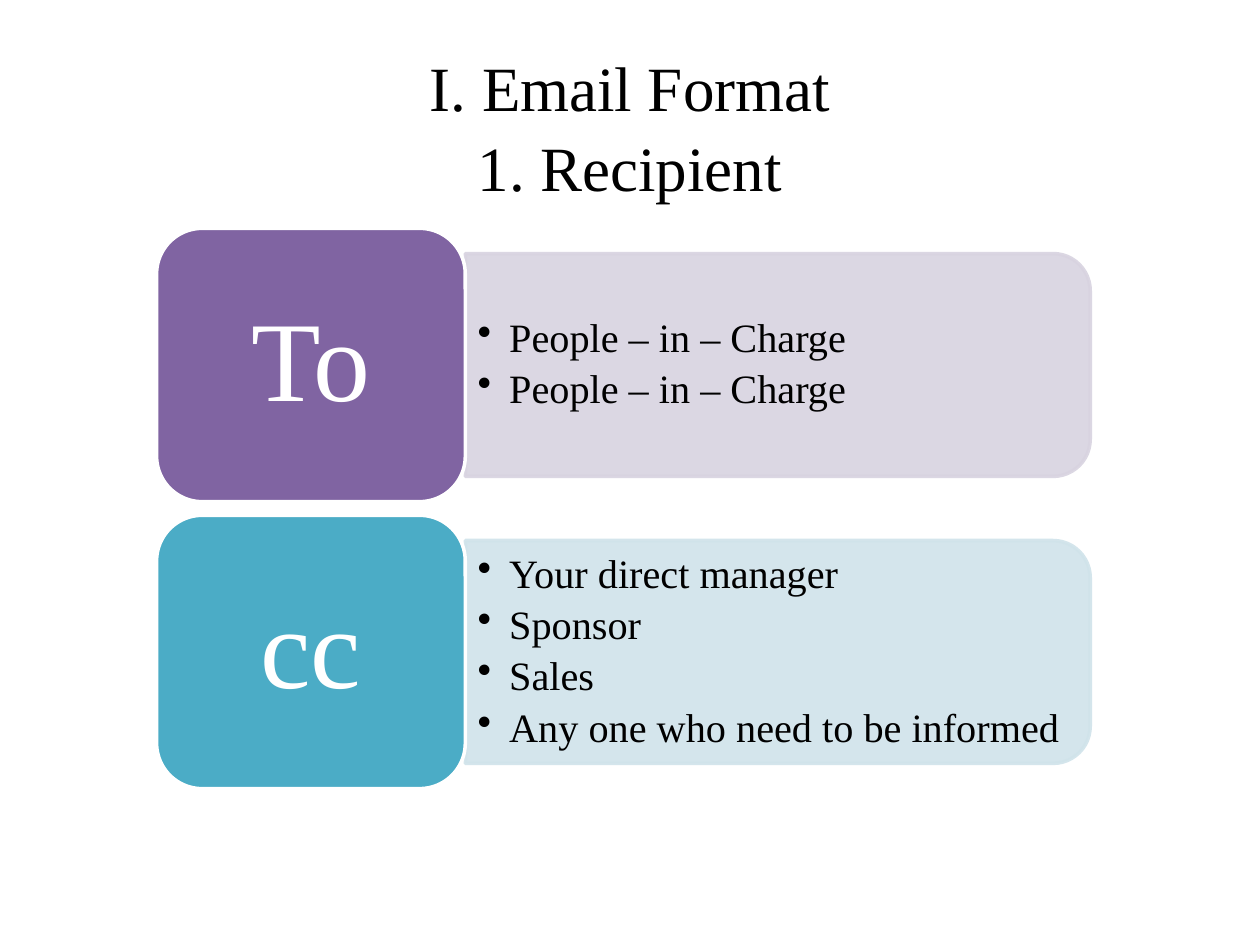
from lxml import etree
from pptx import Presentation
from pptx import util as u
from pptx.dml.color import RGBColor
from pptx.enum import shapes, text
from pptx.oxml import ns

Pt = u.Pt
FONT = "Times New Roman"
ROWS = [
    ("To", "8064A2", "D8D3E0", ["People – in – Charge"] * 2),
    ("cc", "4BACC6", "D0E3EA",
     ["Your direct manager", "Sponsor", "Sales", "Any one who need to be informed"]),
]


def color(value):
    """Turn a hex string into a colour."""
    return RGBColor.from_string(value)


def apply(target, **values):
    """Set each given attribute on the target."""
    for name, value in values.items():
        setattr(target, name, value)


def format_text(paragraph, size, ink, **layout):
    """Set the font and the paragraph layout."""
    apply(paragraph, **layout)
    apply(paragraph.font, name=FONT, size=Pt(size))
    paragraph.font.color.rgb = color(ink)


def paint(shape, fill, line):
    """Give a shape a flat fill and a two point outline."""
    shape.shadow.inherit = False
    shape.fill.solid()
    shape.fill.fore_color.rgb = color(fill)
    shape.line.color.rgb = color(line)
    shape.line.width = Pt(2)


def soften(shape, percent):
    """Set the opacity of the fill and the outline."""
    for tint in shape._element.spPr.iter(ns.qn("a:srgbClr")):
        etree.SubElement(tint, ns.qn("a:alpha"), val=str(percent * 1000))


def add_bullet(paragraph, indent):
    """Give a paragraph a round bullet with a hanging indent."""
    properties = paragraph._p.get_or_add_pPr()
    properties.set("marL", str(Pt(indent)))
    properties.set("indent", str(-Pt(indent)))
    etree.SubElement(properties, ns.qn("a:buChar"), char="•")


def add_title(slide, left, top, width, height):
    """Place the two-line heading in the title placeholder."""
    title = slide.shapes.title
    apply(title, left=Pt(left), top=Pt(top), width=Pt(width), height=Pt(height))
    frame = title.text_frame
    frame.text = "I. Email Format\v1. Recipient"
    apply(frame, auto_size=text.MSO_AUTO_SIZE.NONE, vertical_anchor=text.MSO_ANCHOR.MIDDLE)
    format_text(frame.paragraphs[0], 36, "000000",
                alignment=text.PP_ALIGN.CENTER, line_spacing=1.05)


def add_panel(slide, left, top, width, height, tint, items):
    """Place a panel rounded on its right side, with a bullet list."""
    panel = slide.shapes.add_shape(
        shapes.MSO_SHAPE.ROUND_2_SAME_RECTANGLE,
        Pt(left + (width - height) / 2), Pt(top + (height - width) / 2),
        Pt(height), Pt(width))
    panel.rotation = 90
    paint(panel, tint, tint)
    soften(panel, 90)

    margin = 6
    box = slide.shapes.add_textbox(
        Pt(left), Pt(top + margin), Pt(width - margin), Pt(height - 2 * margin))
    frame = box.text_frame
    apply(frame, word_wrap=True, vertical_anchor=text.MSO_ANCHOR.MIDDLE)
    frame.text = "\n".join(items)
    for paragraph in frame.paragraphs:
        add_bullet(paragraph, 18)
        format_text(paragraph, 23, "000000", level=1, line_spacing=0.9, space_after=Pt(4.5))


def add_label(slide, left, top, width, height, name, fill):
    """Place a rounded block with a large centred name."""
    label = slide.shapes.add_shape(
        shapes.MSO_SHAPE.ROUNDED_RECTANGLE, Pt(left), Pt(top), Pt(width), Pt(height))
    paint(label, fill, "FFFFFF")
    frame = label.text_frame
    frame.text = name
    apply(frame, word_wrap=True, vertical_anchor=text.MSO_ANCHOR.MIDDLE)
    format_text(frame.paragraphs[0], 65, "FFFFFF",
                alignment=text.PP_ALIGN.CENTER, line_spacing=0.9)


def add_row(slide, left, top, width, height, row):
    """Place one recipient field: its list panel and its label."""
    name, fill, tint, items = row
    label_width = 176.4
    inset = 14.4
    add_panel(slide, left + label_width, top + inset,
              width - label_width, height - 2 * inset, tint, items)
    add_label(slide, left, top, label_width, height, name, fill)


def main():
    """Build and save the slide."""
    presentation = Presentation()
    apply(presentation, slide_width=Pt(720), slide_height=Pt(540))
    slide = presentation.slides.add_slide(presentation.slide_layouts[5])
    add_title(slide, 36, 42, 648, 58)
    for index, row in enumerate(ROWS):
        add_row(slide, 89.5, 130.5 + index * 164, 533.5, 156.2, row)
    presentation.save("out.pptx")


if __name__ == "__main__":
    main()
